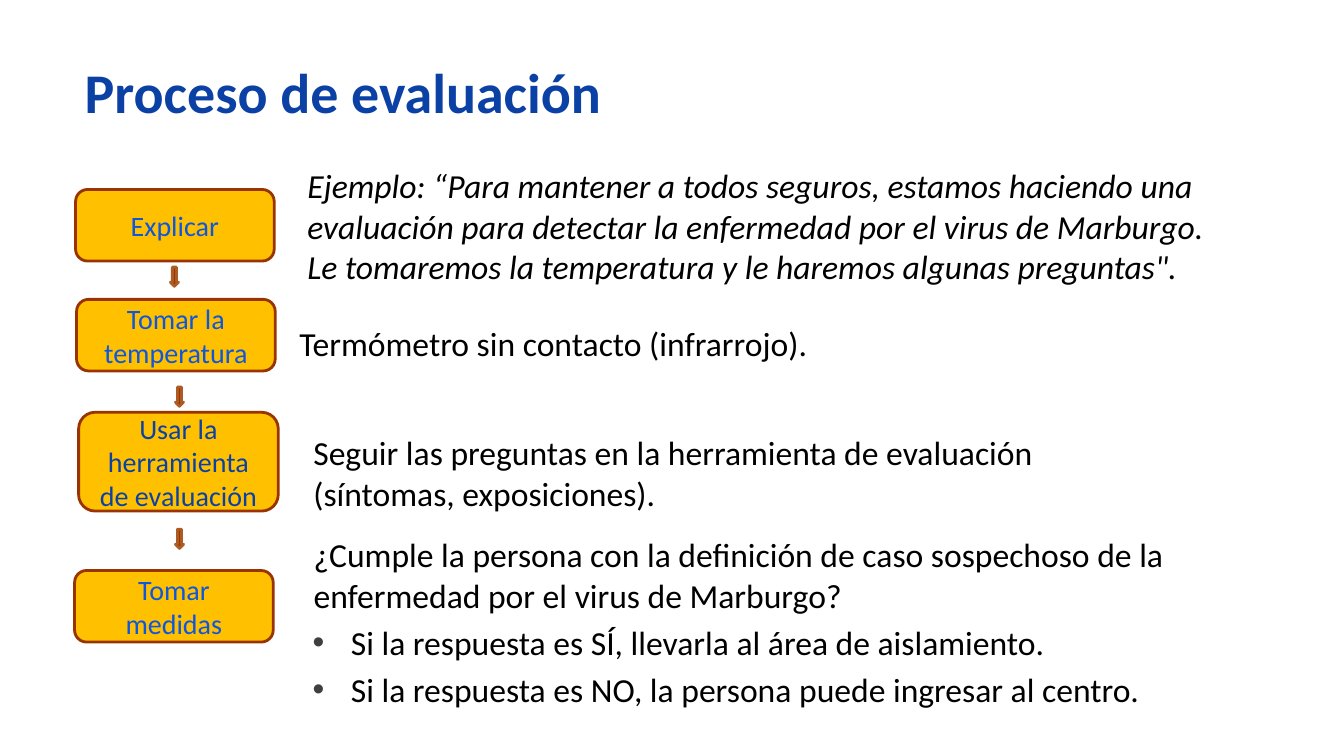
from lxml.etree import SubElement
from pptx import Presentation
from pptx.dml.color import RGBColor
from pptx.enum.shapes import MSO_SHAPE
from pptx.enum.text import MSO_ANCHOR, MSO_AUTO_SIZE, PP_ALIGN
from pptx.oxml.ns import qn
from pptx.util import Inches, Pt

BODY_FONT = {"name": "Calibri", "size": Pt(24), "bold": False}
STEP_FONT = {"name": "Calibri", "size": Pt(20)}
TITLE_FONT = {"name": "Calibri", "size": Pt(40), "bold": True}
NAVY, BLUE, BLACK = "0B41A5", "0F56DC", "000000"

# Label, label colour, box
STEPS = [
    ("Explicar", BLUE, (0.75, 1.88, 1.97, 0.71)),
    ("Tomar la temperatura", BLUE, (0.76, 2.97, 1.97, 0.71)),
    ("Usar la herramienta de evaluación", NAVY, (0.78, 4.09, 1.98, 0.98)),
    ("Tomar medidas", BLUE, (0.74, 5.66, 1.97, 0.71)),
]
ARROWS = [(1.69, 2.65), (1.74, 3.84), (1.74, 5.25)]

# Text, box, left indent, italic
EXPLANATIONS = [
    ("Ejemplo: “Para mantener a todos seguros, estamos haciendo una evaluación "
     "para detectar la enfermedad por el virus de Marburgo. Le tomaremos la "
     "temperatura y le haremos algunas preguntas\".",
     (1.85, 1.59, 10.35, 1.31), 1.1, True),
    ("Termómetro sin contacto (infrarrojo).", (2.77, 3.15, 8.37, 0.5), 0.1, False),
    ("Seguir las preguntas en la herramienta de evaluación (síntomas, exposiciones).",
     (2.91, 4.24, 8.24, 0.5), 0.1, False),
]
QUESTION = ("¿Cumple la persona con la definición de caso sospechoso de la "
            "enfermedad por el virus de Marburgo?")
ANSWERS = [
    "Si la respuesta es SÍ, llevarla al área de aislamiento.",
    "Si la respuesta es NO, la persona puede ingresar al centro.",
]


def color(value):
    return RGBColor.from_string(value)


def set_font(paragraph, font_values, font_color):
    for name, value in font_values.items():
        setattr(paragraph.font, name, value)
    paragraph.font.color.rgb = color(font_color)


def place(shape, box):
    for name, value in zip(("left", "top", "width", "height"), box):
        setattr(shape, name, Inches(value))


def set_indent(paragraph, margin, first_line=0, bullet=None):
    """Set the indents in inches and the bullet; no bullet when it is None."""
    properties = paragraph._p.get_or_add_pPr()
    properties.set("marL", str(Inches(margin)))
    properties.set("indent", str(Inches(first_line)))
    if bullet is None:
        SubElement(properties, qn("a:buNone"))
    else:
        bullet_color = SubElement(properties, qn("a:buClr"))
        SubElement(bullet_color, qn("a:srgbClr"), val="3F3F3F")
        SubElement(properties, qn("a:buChar"), char=bullet)


def add_title(page, box):
    place(page.shapes.title, box)
    frame = page.shapes.title.text_frame
    frame.text = "Proceso de evaluación"
    frame.vertical_anchor = MSO_ANCHOR.MIDDLE
    paragraph = frame.paragraphs[0]
    paragraph.alignment = PP_ALIGN.LEFT
    paragraph.line_spacing = 0.9
    set_font(paragraph, TITLE_FONT, NAVY)


def add_filled_shape(page, kind, box, fill, line):
    shape = page.shapes.add_shape(kind, *map(Inches, box))
    shape.shadow.inherit = False
    shape.fill.solid()
    shape.fill.fore_color.rgb = color(fill)
    shape.line.color.rgb = color(line)
    shape.line.width = Pt(2)
    return shape


def add_step(page, label, label_color, box):
    step = add_filled_shape(page, MSO_SHAPE.ROUNDED_RECTANGLE, box, "FFC000", "993300")
    frame = step.text_frame
    frame.word_wrap = True
    frame.vertical_anchor = MSO_ANCHOR.MIDDLE
    frame.text = label
    frame.paragraphs[0].alignment = PP_ALIGN.CENTER
    set_font(frame.paragraphs[0], STEP_FONT, label_color)


def add_explanation(page, text, box, margin, italic):
    frame = page.shapes.add_textbox(*map(Inches, box)).text_frame
    frame.word_wrap = True
    frame.auto_size = MSO_AUTO_SIZE.SHAPE_TO_FIT_TEXT
    frame.text = text
    set_indent(frame.paragraphs[0], margin)
    set_font(frame.paragraphs[0], {**BODY_FONT, "italic": italic}, BLACK)


def add_decision(page, box):
    body = page.placeholders[1]
    place(body, box)
    frame = body.text_frame
    frame.auto_size = MSO_AUTO_SIZE.SHAPE_TO_FIT_TEXT
    frame.text = "\n".join([QUESTION, *ANSWERS])
    question, *answers = frame.paragraphs
    set_indent(question, 0.1)
    question.space_before = Pt(0)
    for answer in answers:
        set_indent(answer, 0.47, -0.38, "•")
        answer.space_before = Pt(4.8)
    for paragraph in frame.paragraphs:
        set_font(paragraph, BODY_FONT, BLACK)


def main():
    deck = Presentation()
    deck.slide_width, deck.slide_height = Inches(13.33), Inches(7.5)
    page = deck.slides.add_slide(deck.slide_layouts[1])
    add_title(page, (0.74, 0.22, 11.13, 1.45))
    for step in STEPS:
        add_step(page, *step)
    for explanation in EXPLANATIONS:
        add_explanation(page, *explanation)
    add_decision(page, (2.91, 5.25, 8.81, 1.86))
    for left, top in ARROWS:
        add_filled_shape(page, MSO_SHAPE.DOWN_ARROW, (left, top, 0.08, 0.19),
                         "993300", "AC5B23")
    deck.save("out.pptx")


if __name__ == "__main__":
    main()
